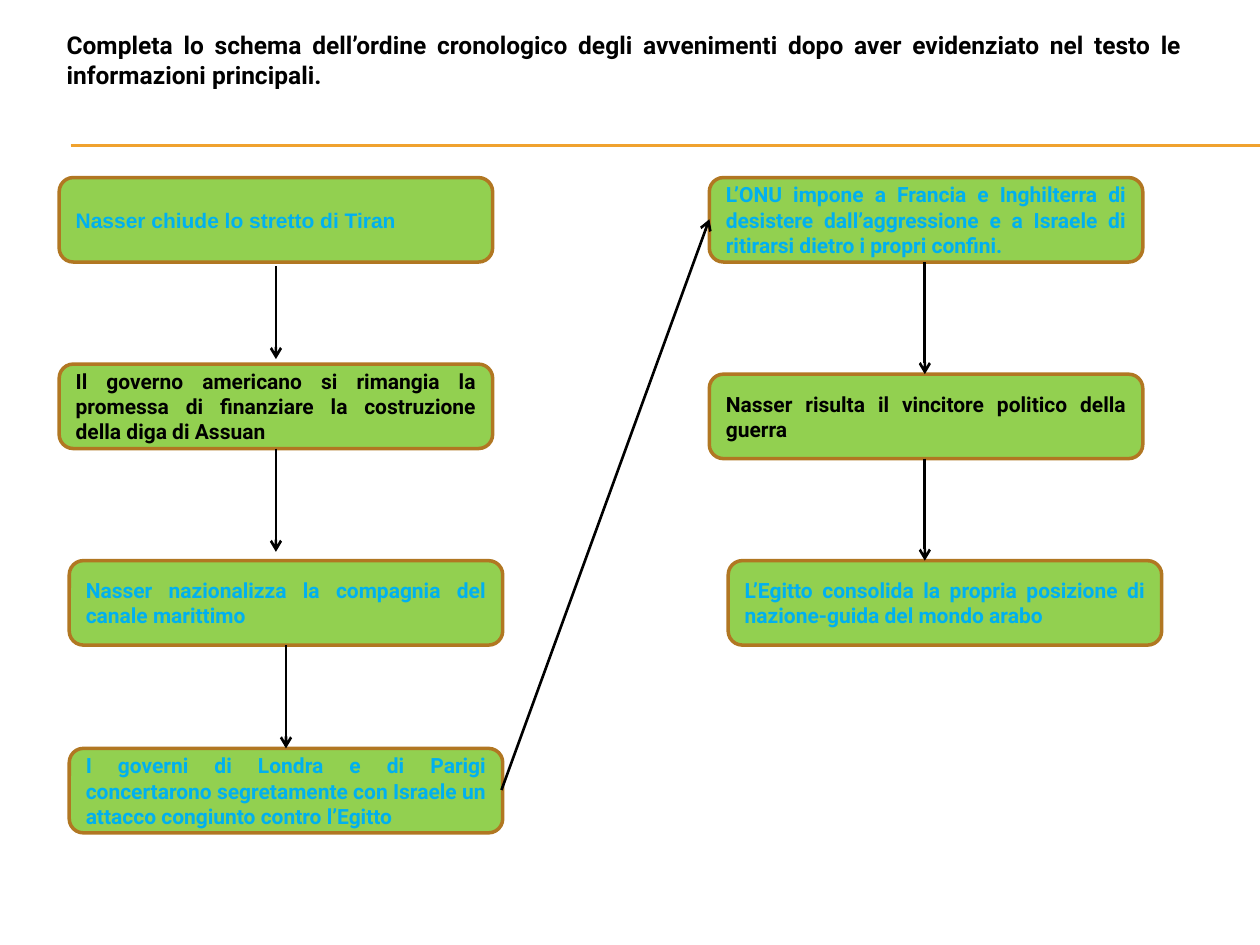
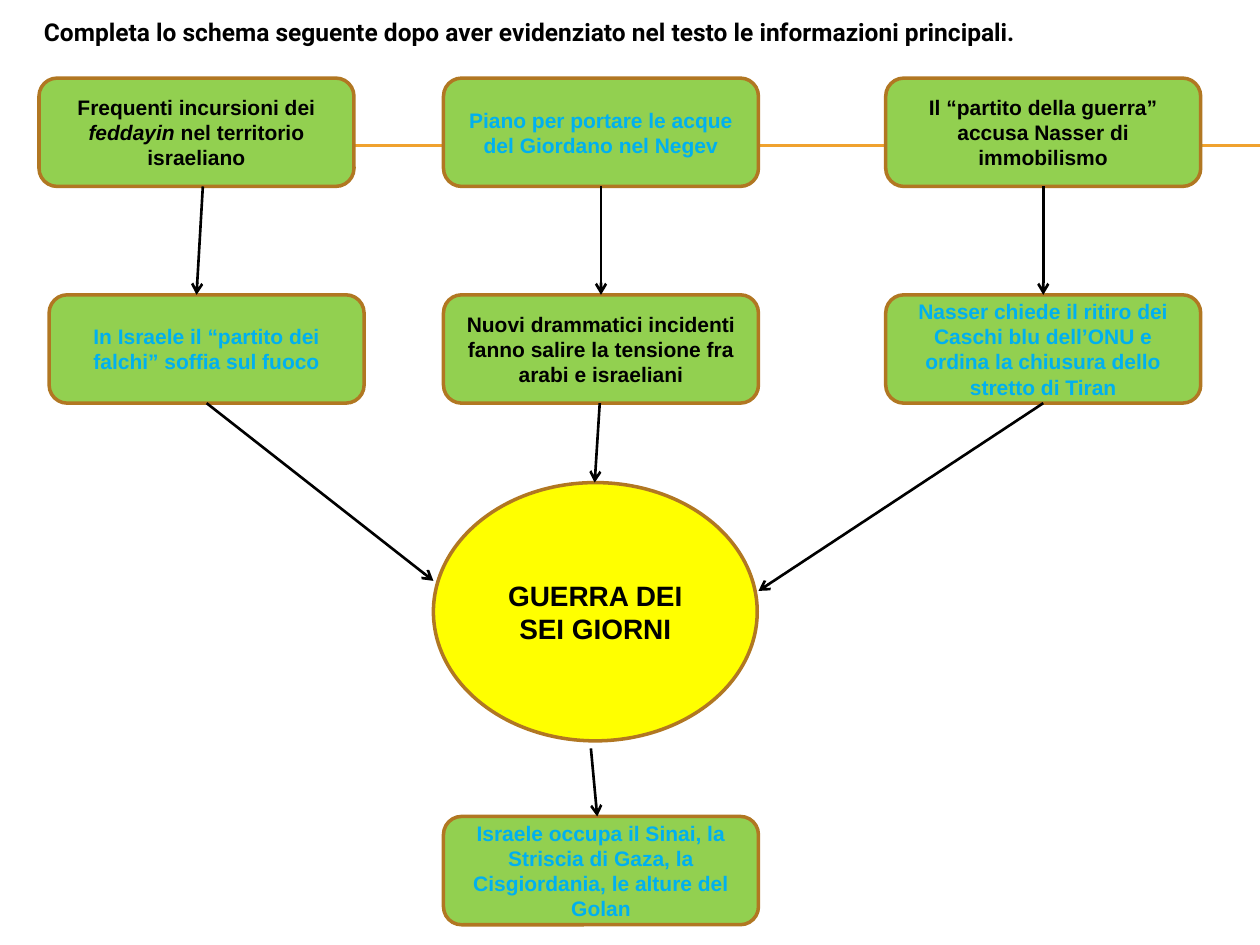
import dataclasses

import lxml.etree
import pptx
import pptx.dml.color
import pptx.enum.shapes
import pptx.enum.text
import pptx.oxml.ns
import pptx.util

Inches = pptx.util.Inches
Points = pptx.util.Pt
Color = pptx.dml.color.RGBColor.from_string
Shapes = pptx.enum.shapes.MSO_SHAPE
Align = pptx.enum.text.PP_ALIGN


@dataclasses.dataclass(frozen=True)
class Theme:
    given: str = "000000"
    answer: str = "00B0F0"
    box: str = "92D050"
    focus: str = "FFFF00"
    border: str = "B17722"
    rule: str = "F0A22E"
    arrow: str = "000000"
    title_font: str = "Roboto"
    body_font: str = "Arial"
    title_size: int = 14
    body_size: int = 12
    focus_size: int = 16
    border_width: float = 2
    arrow_width: float = 1.5
    rule_width: float = 0.75


theme = Theme()


def add_text(slide, text, left, top, width, height, *, kind=None, fill=theme.box,
             font=theme.body_font, size=theme.body_size, color=theme.given,
             align=Align.CENTER):
    """Add bold text in a preset shape, or in a plain text box if kind is None.

    Words between asterisks become italic.
    """
    place = [Inches(length) for length in (left, top, width, height)]
    if kind is None:
        shape = slide.shapes.add_textbox(*place)
    else:
        shape = slide.shapes.add_shape(kind, *place)
        shape.shadow.inherit = False
        shape.fill.solid()
        shape.fill.fore_color.rgb = Color(fill)
        shape.line.color.rgb = Color(theme.border)
        shape.line.width = Points(theme.border_width)
    frame = shape.text_frame
    frame.word_wrap = True
    frame.vertical_anchor = pptx.enum.text.MSO_ANCHOR.MIDDLE
    paragraph = frame.paragraphs[0]
    paragraph.alignment = align
    for index, part in enumerate(text.split("*")):
        run = paragraph.add_run()
        run.text = part
        run.font.name = font
        run.font.size = Points(size)
        run.font.bold = True
        run.font.italic = index % 2 == 1
        run.font.color.rgb = Color(color)


def add_line(slide, start, end, color=theme.arrow, width=theme.arrow_width, arrow=True):
    connector = slide.shapes.add_connector(
        pptx.enum.shapes.MSO_CONNECTOR.STRAIGHT,
        *(Inches(length) for length in (*start, *end)))
    connector.line.color.rgb = Color(color)
    connector.line.width = Points(width)
    if arrow:
        lxml.etree.SubElement(connector.line._get_or_add_ln(),
                              pptx.oxml.ns.qn("a:tailEnd"), type="arrow")
    lxml.etree.SubElement(connector._element.spPr, pptx.oxml.ns.qn("a:effectLst"))


presentation = pptx.Presentation()
presentation.slide_width = Inches(10)
presentation.slide_height = Inches(7.5)

# Shared by both slides: the double rule and the title
titles = [
    ("Completa lo schema dell’ordine cronologico degli avvenimenti dopo aver "
     "evidenziato nel testo le informazioni principali.", (0.43, 0.09, 9.05, 0.77)),
    ("Completa lo schema seguente dopo aver evidenziato nel testo le informazioni "
     "principali.", (0.25, 0.1, 8, 0.3)),
]
for title, place in titles:
    slide = presentation.slides.add_slide(presentation.slide_layouts[6])
    for height in (1.15, 1.16):
        add_line(slide, (0.56, height), (10, height), theme.rule, theme.rule_width,
                 arrow=False)
    add_text(slide, title, *place, font=theme.title_font, size=theme.title_size,
             align=Align.JUSTIFY)
timeline, causes = presentation.slides

# Slide 1: chronological order of the events
event_width, event_height = 3.44, 0.67
events = [
    (0.47, 1.41, theme.answer, theme.body_font, "Nasser chiude lo stretto di Tiran"),
    (0.47, 2.89, theme.given, theme.title_font,
     "Il governo americano si rimangia la promessa di finanziare la costruzione "
     "della diga di Assuan"),
    (0.55, 4.45, theme.answer, theme.title_font,
     "Nasser nazionalizza la compagnia del canale marittimo"),
    (0.55, 5.94, theme.answer, theme.title_font,
     "I governi di Londra e di Parigi concertarono segretamente con Israele un "
     "attacco congiunto contro l’Egitto"),
    (5.63, 1.41, theme.answer, theme.title_font,
     "L’ONU impone a Francia e Inghilterra di desistere dall’aggressione e a Israele "
     "di ritirarsi dietro i propri confini."),
    (5.63, 2.97, theme.given, theme.title_font,
     "Nasser risulta il vincitore politico della guerra"),
    (5.78, 4.45, theme.answer, theme.title_font,
     "L’Egitto consolida la propria posizione di nazione-guida del mondo arabo"),
]
for left, top, color, font, text in events:
    add_text(timeline, text, left, top, event_width, event_height,
             kind=Shapes.ROUNDED_RECTANGLE, font=font, color=color, align=Align.JUSTIFY)

for center, top, bottom in [(2.19, 2.11, 2.85), (2.19, 3.56, 4.38), (2.27, 5.12, 5.94),
                            (7.34, 2.08, 2.97), (7.34, 3.64, 4.45)]:
    add_line(timeline, (center, top), (center, bottom))
add_line(timeline, (3.98, 6.27), (5.63, 1.74))

# Slide 2: causes and outcome of the war
cause_width, cause_height = 2.5, 0.86
first_row, second_row, outcome_row = 0.62, 2.34, 6.48
middle_column, right_column = 3.52, 7.03
add_text(causes, "GUERRA DEI SEI GIORNI", 3.44, 3.83, 2.57, 2.05, kind=Shapes.OVAL,
         fill=theme.focus, size=theme.focus_size)
cause_boxes = [
    (0.31, first_row, theme.given,
     "Frequenti incursioni dei *feddayin* nel territorio israeliano"),
    (middle_column, first_row, theme.answer,
     "Piano per portare le acque del Giordano nel Negev"),
    (right_column, first_row, theme.given,
     "Il “partito della guerra” accusa Nasser di immobilismo"),
    (0.39, second_row, theme.answer,
     "In Israele il “partito dei falchi” soffia sul fuoco"),
    (middle_column, second_row, theme.given,
     "Nuovi drammatici incidenti fanno salire la tensione fra arabi e israeliani"),
    (right_column, second_row, theme.answer,
     "Nasser chiede il ritiro dei Caschi blu dell’ONU e ordina la chiusura dello "
     "stretto di Tiran"),
    (middle_column, outcome_row, theme.answer,
     "Israele occupa il Sinai, la Striscia di Gaza, la Cisgiordania, le alture del "
     "Golan"),
]
for left, top, color, text in cause_boxes:
    add_text(causes, text, left, top, cause_width, cause_height,
             kind=Shapes.ROUNDED_RECTANGLE, color=color)

first_bottom, second_bottom = first_row + cause_height, second_row + cause_height
cause_arrows = [
    ((1.61, first_bottom), (1.56, second_row)),
    ((4.77, first_bottom), (4.77, second_row)),
    ((8.28, first_bottom), (8.28, second_row)),
    ((1.64, second_bottom), (3.44, 4.61)),
    ((4.76, second_bottom), (4.72, 3.83)),
    ((8.28, second_bottom), (6.02, 4.69)),
    ((4.69, 5.94), (4.74, outcome_row)),
]
for start, end in cause_arrows:
    add_line(causes, start, end)

presentation.save("out.pptx")
